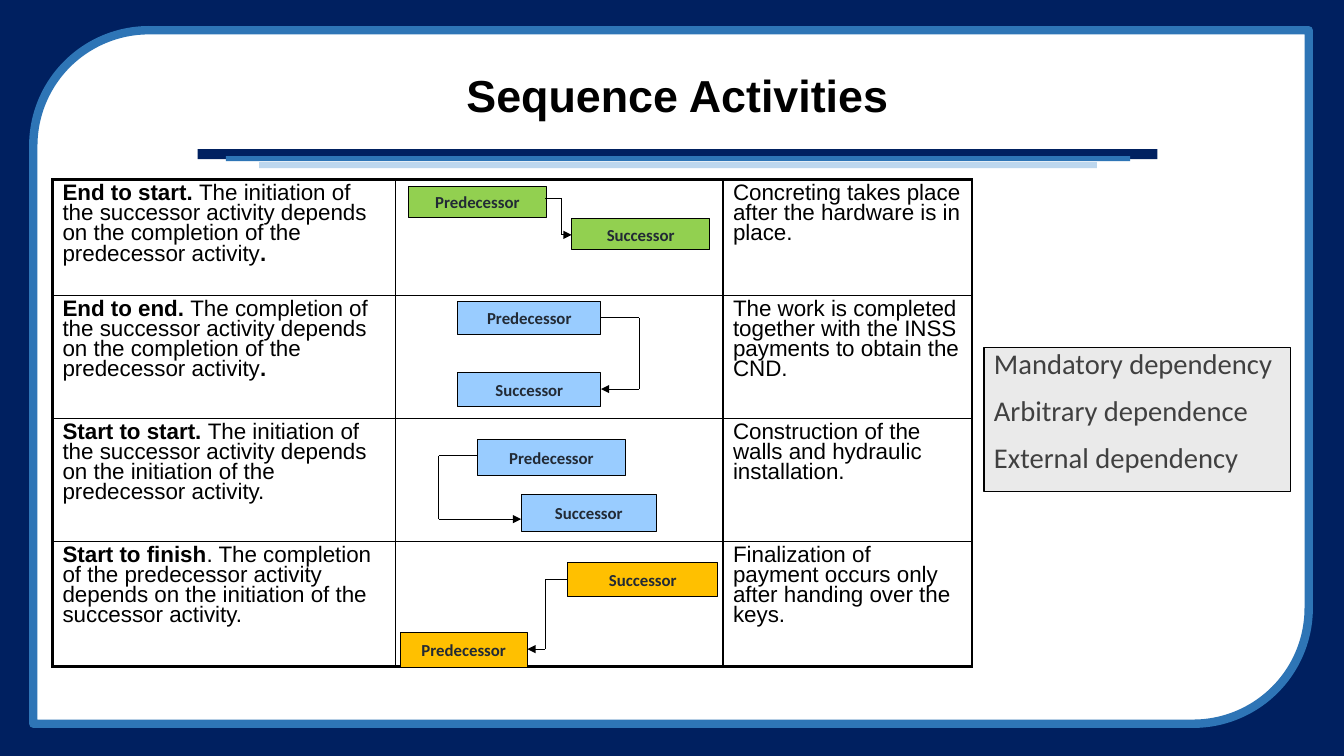
from dataclasses import dataclass
from itertools import pairwise

from lxml import etree
from pptx import Presentation
from pptx.dml.color import RGBColor
from pptx.enum.shapes import MSO_CONNECTOR, MSO_SHAPE
from pptx.enum.text import MSO_ANCHOR, PP_ALIGN
from pptx.oxml.ns import qn
from pptx.util import Inches, Pt

RECT = MSO_SHAPE.RECTANGLE
FRAME = MSO_SHAPE.ROUND_2_DIAG_RECTANGLE
LINE = MSO_CONNECTOR.STRAIGHT
MIDDLE, TOP = MSO_ANCHOR.MIDDLE, MSO_ANCHOR.TOP
CENTER, LEFT = PP_ALIGN.CENTER, PP_ALIGN.LEFT

BLACK = RGBColor(0x00, 0x00, 0x00)
WHITE = RGBColor(0xFF, 0xFF, 0xFF)
NAVY = RGBColor(0x00, 0x20, 0x60)
BLUE = RGBColor(0x2E, 0x75, 0xB6)
PALE = RGBColor(0xBD, 0xD7, 0xEE)
GREEN = RGBColor(0x92, 0xD0, 0x50)
SKY = RGBColor(0x99, 0xCC, 0xFF)
GOLD = RGBColor(0xFF, 0xC0, 0x00)
GRAY = RGBColor(0xEA, 0xEA, 0xEA)
SLATE = RGBColor(0x22, 0x2A, 0x35)
DARK = RGBColor(0x40, 0x40, 0x40)

Area = tuple[float, float, float, float]
Point = tuple[float, float]
Piece = tuple[str, bool]


@dataclass
class Link:
    """One dependency type: its table row and its diagram."""
    rule: list[Piece]
    case: str
    color: RGBColor
    before: Area
    after: Area
    route: list[Point]


LINKS = [
    Link([("End to start. ", True),
          ("The initiation of the successor activity depends on the "
           "completion of the predecessor activity", False), (".", True)],
         "Concreting takes place after the hardware is in place.",
         GREEN, (4.05, 1.85, 1.37, 0.31), (5.67, 2.17, 1.37, 0.31),
         [(5.41, 1.97), (5.57, 1.97), (5.57, 2.33), (5.67, 2.33)]),
    Link([("End to end. ", True),
          ("The completion of the successor activity depends on the "
           "completion of the predecessor activity", False), (".", True)],
         "The work is completed together with the INSS payments to obtain "
         "the CND.",
         SKY, (4.54, 2.99, 1.42, 0.33), (4.54, 3.7, 1.42, 0.33),
         [(5.96, 3.15), (6.34, 3.15), (6.34, 3.86), (5.96, 3.86)]),
    Link([("Start to start. ", True),
          ("The initiation of the successor activity depends on the "
           "initiation of the predecessor activity.", False)],
         "Construction of the walls and hydraulic installation.",
         SKY, (4.74, 4.36, 1.46, 0.36), (5.17, 4.91, 1.34, 0.36),
         [(4.73, 4.52), (4.35, 4.52), (4.35, 5.15), (5.17, 5.15)]),
    Link([("Start to finish", True),
          (". The completion of the predecessor activity depends on the "
           "initiation of the successor activity.", False)],
         "Finalization of payment occurs only after handing over the keys.",
         GOLD, (3.97, 6.27, 1.26, 0.35), (5.63, 5.58, 1.49, 0.34),
         [(5.63, 5.75), (5.41, 5.75), (5.41, 6.44), (5.23, 6.44)]),
]
COLS = [3.4, 3.25, 2.47]
ROWS = [1.15, 1.22, 1.22, 1.24]
BARS = [((1.96, 1.48, 9.52, 0.1), NAVY),
        ((2.24, 1.55, 8.97, 0.05), BLUE),
        ((2.57, 1.61, 8.31, 0.06), PALE)]
KINDS = ["Mandatory dependency", "Arbitrary dependence",
         "External dependency"]


def add_run(para, text: str, size: float, font: str, color: RGBColor,
            bold: bool = False) -> None:
    run = para.add_run()
    run.text = text
    run.font.size = Pt(size)
    run.font.name = font
    run.font.color.rgb = color
    run.font.bold = bold


def add_box(slide, area: Area, fill: RGBColor, edge: RGBColor | None = None,
            width: float = 0.75, kind=RECT):
    box = slide.shapes.add_shape(kind, *map(Inches, area))
    box.shadow.inherit = False
    box.fill.solid()
    box.fill.fore_color.rgb = fill
    if edge is None:
        box.line.fill.background()
    else:
        box.line.color.rgb = edge
        box.line.width = Pt(width)
    return box


def add_label(slide, area: Area, fill: RGBColor, text: str) -> None:
    frame = add_box(slide, area, fill, BLACK).text_frame
    frame.word_wrap = False
    frame.vertical_anchor = MIDDLE
    para = frame.paragraphs[0]
    para.alignment = CENTER
    add_run(para, text, 12, "Calibri", SLATE, True)


def add_route(slide, route: list[Point]) -> None:
    """Join the points with lines; the last one bears an arrowhead."""
    for start, end in pairwise(route):
        line = slide.shapes.add_connector(LINE, *map(Inches, start + end))
        line.line.color.rgb = BLACK
        line.line.width = Pt(0.75)
        props = line._element.spPr
        etree.SubElement(props, qn("a:effectLst"))
    etree.SubElement(props.find(qn("a:ln")), qn("a:tailEnd"), type="triangle")


def set_edges(cell, row: int, col: int) -> None:
    """Draw thick lines on the rim of the table, thin ones inside."""
    rims = {"L": col == 0, "R": col == len(COLS) - 1,
            "T": row == 0, "B": row == len(ROWS) - 1}
    props = cell._tc.get_or_add_tcPr()
    for side, rim in rims.items():
        edge = etree.SubElement(props, qn(f"a:ln{side}"),
                                w=str(Pt(2.25 if rim else 1)))
        fill = etree.SubElement(edge, qn("a:solidFill"))
        etree.SubElement(fill, qn("a:srgbClr"), val=str(BLACK))


def add_grid(slide) -> None:
    area = (0.52, 1.78, sum(COLS), sum(ROWS))
    grid = slide.shapes.add_table(len(ROWS), len(COLS),
                                  *map(Inches, area)).table
    grid.first_row = grid.horz_banding = False
    for col, width in zip(grid.columns, COLS):
        col.width = Inches(width)
    for row, high in zip(grid.rows, ROWS):
        row.height = Inches(high)
    for r, link in enumerate(LINKS):
        for c, pieces in enumerate([link.rule, [], [(link.case, False)]]):
            cell = grid.cell(r, c)
            set_edges(cell, r, c)
            cell.fill.background()
            para = cell.text_frame.paragraphs[0]
            para.line_spacing = 0.81
            for text, bold in pieces:
                add_run(para, text, 16, "Arial", BLACK, bold)


def add_kinds(slide) -> None:
    frame = add_box(slide, (9.76, 3.45, 3.04, 1.43), GRAY, BLACK).text_frame
    frame.word_wrap = True
    frame.vertical_anchor = TOP
    for i, kind in enumerate(KINDS):
        para = frame.add_paragraph() if i else frame.paragraphs[0]
        para.alignment = LEFT
        para.line_spacing = 0.8
        para.space_before = Pt(12 if i else 0)
        para.space_after = Pt(2)
        add_run(para, kind, 20.4, "Calibri", DARK)


def add_title(slide, text: str) -> None:
    title = slide.shapes.title
    title.left, title.top, title.width, title.height = map(
        Inches, (1.96, 0.49, 9.52, 0.97))
    frame = title.text_frame
    frame.vertical_anchor = MIDDLE
    para = frame.paragraphs[0]
    para.alignment = CENTER
    para.line_spacing = 0.9
    add_run(para, text, 32, "Arial", BLACK, True)
    slide.shapes._spTree.append(title._element)  # bring above the backdrop


def main() -> None:
    deck = Presentation()
    deck.slide_width, deck.slide_height = Inches(13.33), Inches(7.5)
    slide = deck.slides.add_slide(deck.slide_layouts[5])
    add_box(slide, (0, 0, 13.33, 7.5), NAVY)
    add_box(slide, (0.33, 0.3, 12.65, 6.88), WHITE, BLUE, 6, FRAME)
    for area, color in BARS:
        add_box(slide, area, color)
    add_title(slide, "Sequence Activities")
    add_grid(slide)
    for link in LINKS:
        add_label(slide, link.before, link.color, "Predecessor")
        add_label(slide, link.after, link.color, "Successor")
        add_route(slide, link.route)
    add_kinds(slide)
    deck.save("out.pptx")


if __name__ == "__main__":
    main()
